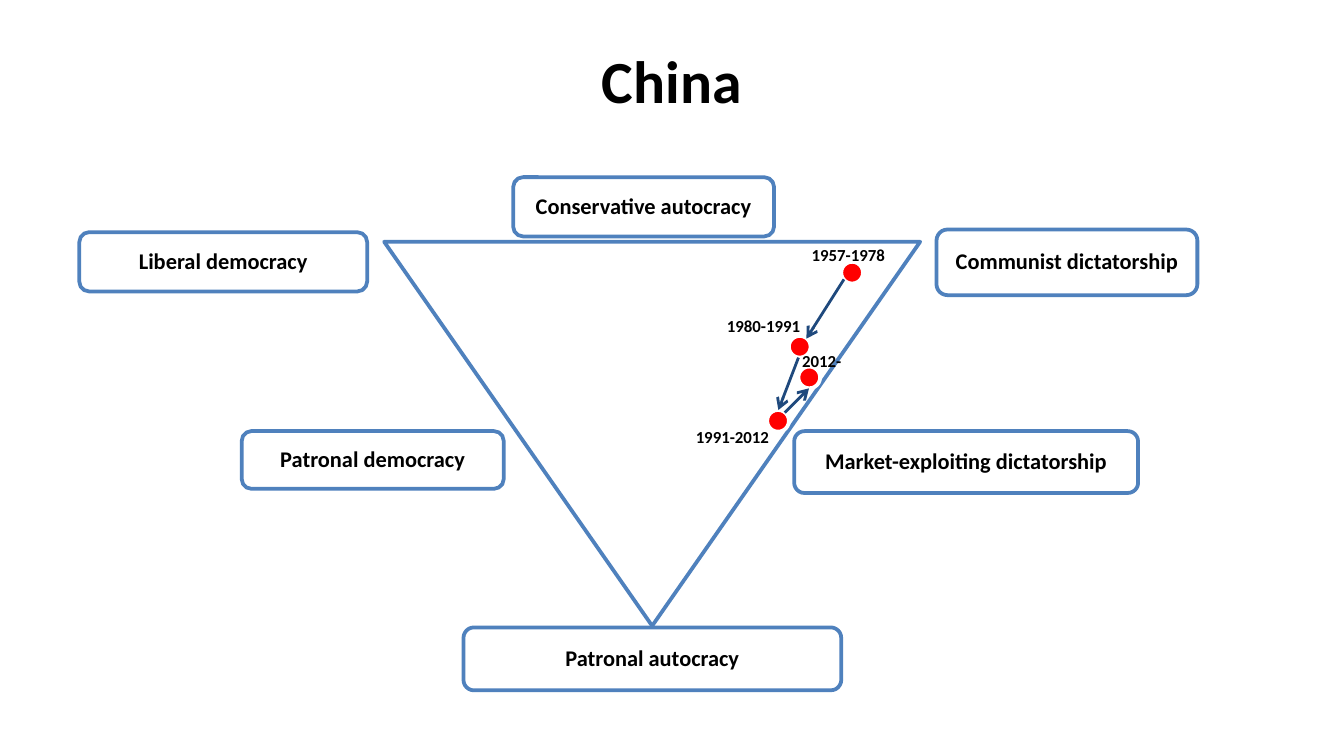
from lxml.etree import SubElement
from pptx import Presentation
from pptx.dml.color import RGBColor
from pptx.enum.shapes import MSO_CONNECTOR, MSO_SHAPE
from pptx.enum.text import MSO_ANCHOR, PP_ALIGN
from pptx.oxml.ns import qn
from pptx.util import Cm, Pt

BLACK = RGBColor(0x00, 0x00, 0x00)
WHITE = RGBColor(0xFF, 0xFF, 0xFF)
BLUE = RGBColor(0x4F, 0x81, 0xBD)
NAVY = RGBColor(0x1F, 0x49, 0x7D)
RED = RGBColor(0xFF, 0x00, 0x00)

DOT_SIZE = 0.41

# Regime type: left, top, width, height in cm
REGIMES = {
    "Communist dictatorship": (17.7, 4.34, 4.93, 1.24),
    "Liberal democracy": (1.5, 4.39, 5.44, 1.12),
    "Patronal autocracy": (8.76, 11.86, 7.14, 1.19),
    "Conservative autocracy": (9.7, 3.35, 4.93, 1.12),
    "Market-exploiting dictatorship": (15.01, 8.15, 6.5, 1.17),
    "Patronal democracy": (4.57, 8.15, 4.95, 1.09),
}
# Period: left and top of its dot, left and top of its label
PERIODS = {
    "1957-1978": ((15.9, 4.95), (15.09, 4.5)),
    "1980-1991": ((14.91, 6.35), (13.49, 5.84)),
    "1991-2012": ((14.5, 7.75), (12.9, 7.95)),
    "2012-": ((15.09, 6.93), (14.91, 6.5)),
}
# Start x, start y, end x, end y
TRANSITIONS = [
    (15.95, 5.28, 15.24, 6.4),
    (15.09, 6.76, 14.71, 7.75),
    (14.83, 7.8, 15.29, 7.34),
]


def write(shape, text, size, align=PP_ALIGN.CENTER, anchor=MSO_ANCHOR.MIDDLE):
    frame = shape.text_frame
    frame.word_wrap = True
    frame.vertical_anchor = anchor
    paragraph = frame.paragraphs[0]
    paragraph.alignment = align
    run = paragraph.add_run()
    run.text = text
    run.font.name = "Calibri"
    run.font.size = Pt(size)
    run.font.bold = True
    run.font.color.rgb = BLACK


def add_outlined(kind, box, line_color):
    shape = slide.shapes.add_shape(kind, *map(Cm, box))
    shape.shadow.inherit = False
    shape.line.color.rgb = line_color
    shape.line.width = Pt(2)
    return shape


prs = Presentation()
prs.slide_width, prs.slide_height = Cm(25.4), Cm(14.29)
slide = prs.slides.add_slide(prs.slide_layouts[6])

title = slide.shapes.add_textbox(Cm(0), Cm(0.53), Cm(25.4), Cm(1.96))
write(title, "China", 32)

# Triangle of regimes
triangle = add_outlined(MSO_SHAPE.ISOSCELES_TRIANGLE, (7.26, 4.57, 10.13, 7.26), BLUE)
triangle.rotation = 180
triangle.fill.background()

for regime, box in REGIMES.items():
    regime_box = add_outlined(MSO_SHAPE.ROUNDED_RECTANGLE, box, BLUE)
    regime_box.fill.solid()
    regime_box.fill.fore_color.rgb = WHITE
    fill_color = regime_box._element.spPr.find(qn("a:solidFill"))[0]
    SubElement(fill_color, qn("a:alpha"), val="90000")
    frame = regime_box.text_frame
    frame.margin_left = frame.margin_right = Cm(0.13)
    frame.margin_top = frame.margin_bottom = Cm(0.13)
    write(regime_box, regime, 12)
    frame.paragraphs[0].line_spacing = 0.9

# Path through the periods
for dot_at, _ in PERIODS.values():
    dot = add_outlined(MSO_SHAPE.OVAL, (*dot_at, DOT_SIZE, DOT_SIZE), WHITE)
    dot.fill.solid()
    dot.fill.fore_color.rgb = RED

for ends in TRANSITIONS:
    arrow = slide.shapes.add_connector(MSO_CONNECTOR.STRAIGHT, *map(Cm, ends))
    arrow.line.color.rgb = NAVY
    arrow.line.width = Pt(1.5)
    SubElement(arrow.line._get_or_add_ln(), qn("a:tailEnd"), type="arrow")
    SubElement(arrow._element.spPr, qn("a:effectLst"))

for period, (_, label_at) in PERIODS.items():
    label = slide.shapes.add_textbox(*map(Cm, (*label_at, 2.59, 0.64)))
    write(label, period, 9, PP_ALIGN.LEFT, MSO_ANCHOR.TOP)

prs.save("out.pptx")
